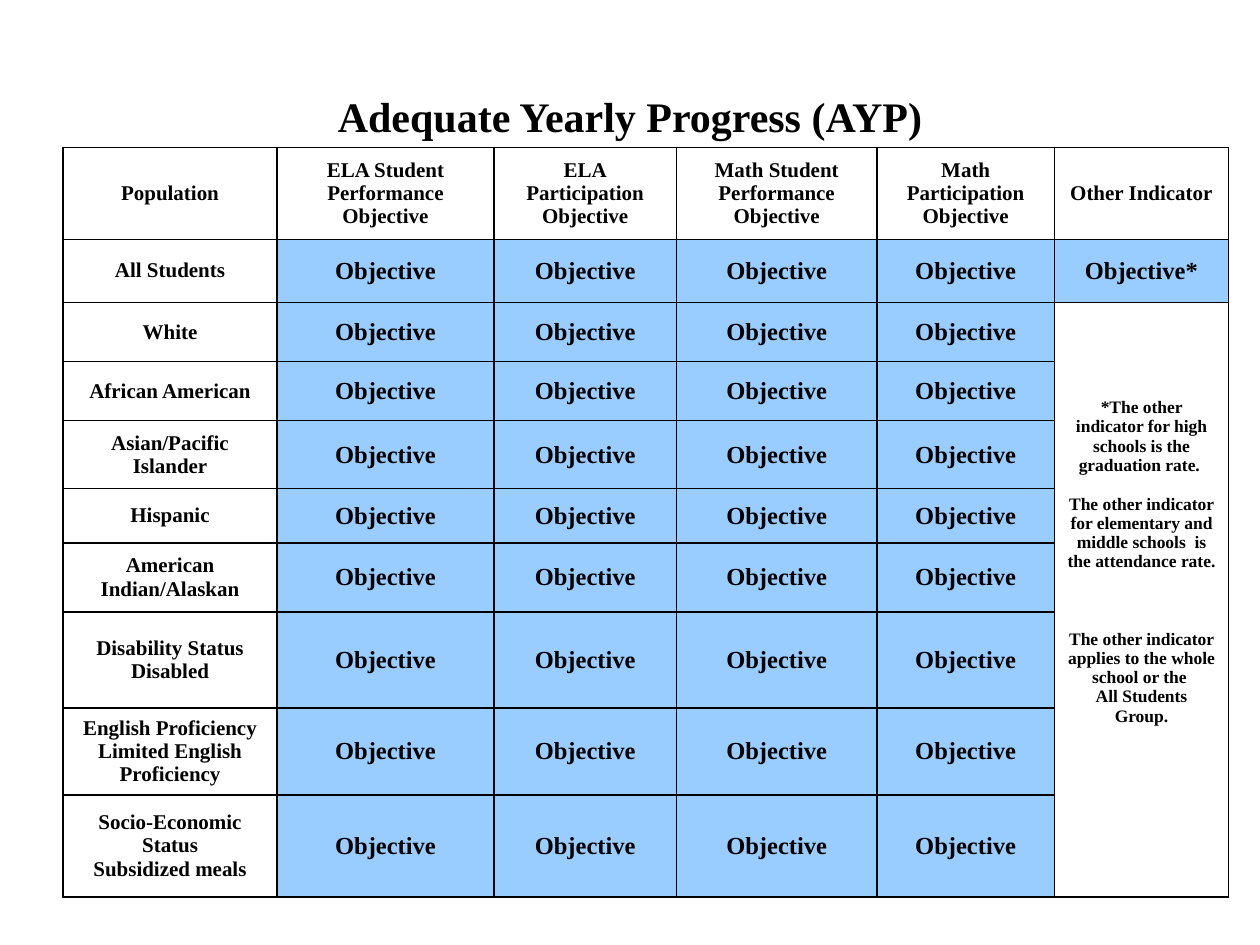
from lxml import etree
from pptx import Presentation
from pptx.dml.color import RGBColor
from pptx.enum.text import MSO_ANCHOR, PP_ALIGN
from pptx.oxml.ns import qn
from pptx.util import Inches, Pt

CENTER = PP_ALIGN.CENTER
TOP, MIDDLE = MSO_ANCHOR.TOP, MSO_ANCHOR.MIDDLE
FONT = "Times New Roman"
COLORS = {"text": "000000", "line": "000000", "plain": "FFFFFF", "objective": "99CCFF"}

COL_WIDTHS = [1.7, 1.72, 1.45, 1.59, 1.41, 1.38]
ROW_HEIGHTS = [0.73, 0.5, 0.47, 0.47, 0.54, 0.43, 0.55, 0.76, 0.69, 0.81]
HEADERS = [
    "Population",
    "ELA Student Performance Objective",
    "ELA\nParticipation Objective",
    "Math Student Performance Objective",
    "Math Participation Objective",
    "Other Indicator",
]
POPULATIONS = [
    "All Students",
    "White",
    "African American",
    "Asian/Pacific Islander",
    "Hispanic",
    "American Indian/Alaskan",
    "Disability Status\nDisabled",
    "English Proficiency\nLimited English Proficiency",
    "Socio-Economic Status\nSubsidized meals",
]
# Each note paragraph with the space before it, in points
NOTES = [
    ("*The other indicator for high schools is the graduation rate. ", 0),
    ("The other indicator for elementary and middle schools  is the attendance rate.  ", 11),
    ("The other indicator applies to the whole school or the ", 22),
    ("All Students Group.", 0),
]


def write_text(tf, text, size=12, gaps=None):
    """Write one centred bold paragraph per line of text."""
    for i, line in enumerate(text.split("\n")):
        p = tf.paragraphs[0] if i == 0 else tf.add_paragraph()
        p.alignment = CENTER
        p.space_before = Pt(gaps[i] if gaps else 0)
        r = p.add_run()
        r.text = line
        r.font.name = FONT
        r.font.size = Pt(size)
        r.font.bold = True
        r.font.color.rgb = RGBColor.from_string(COLORS["text"])


def style_cell(cell, fill):
    tc_pr = cell._tc.get_or_add_tcPr()
    for side in ("lnL", "lnR", "lnT", "lnB"):
        ln = etree.SubElement(tc_pr, qn(f"a:{side}"), w=str(Pt(1)))
        solid = etree.SubElement(ln, qn("a:solidFill"))
        etree.SubElement(solid, qn("a:srgbClr"), val=COLORS["line"])
    cell.fill.solid()
    cell.fill.fore_color.rgb = RGBColor.from_string(COLORS[fill])
    cell.vertical_anchor = MIDDLE


def add_title(slide, left, top, width, height):
    title = slide.shapes.title
    title.left, title.top = Inches(left), Inches(top)
    title.width, title.height = Inches(width), Inches(height)
    title.text_frame.vertical_anchor = TOP
    write_text(title.text_frame, "Adequate Yearly Progress (AYP)", size=24)


def add_progress_table(slide, left, top, width, height):
    rows, cols = len(ROW_HEIGHTS), len(COL_WIDTHS)
    table = slide.shapes.add_table(rows, cols, Inches(left), Inches(top),
                                   Inches(width), Inches(height)).table
    table.first_row = table.horz_banding = False
    for col, share in zip(table.columns, COL_WIDTHS):
        col.width = Inches(width * share / sum(COL_WIDTHS))
    for row, share in zip(table.rows, ROW_HEIGHTS):
        row.height = Inches(height * share / sum(ROW_HEIGHTS))

    last = cols - 1
    for r in range(rows):
        for c in range(cols):
            cell = table.cell(r, c)
            is_note = r > 1 and c == last
            is_objective = r > 0 and c > 0 and not is_note
            style_cell(cell, "objective" if is_objective else "plain")
            if is_objective:
                write_text(cell.text_frame, "Objective*" if c == last else "Objective", size=14)
            elif not is_note:
                write_text(cell.text_frame, HEADERS[c] if r == 0 else POPULATIONS[r - 1])

    note = table.cell(2, last)
    note.merge(table.cell(rows - 1, last))
    note.vertical_anchor = TOP
    note.margin_top = Inches(0.76)
    lines, gaps = zip(*NOTES)
    write_text(note.text_frame, "\n".join(lines), size=10, gaps=gaps)


def main():
    prs = Presentation()
    prs.slide_width, prs.slide_height = Inches(10), Inches(7.5)
    slide = prs.slides.add_slide(prs.slide_layouts[5])
    add_title(slide, 0.75, 0.67, 8.5, 0.83)
    add_progress_table(slide, 0.5, 1.17, 9.25, 5.95)
    prs.save("out.pptx")


if __name__ == "__main__":
    main()
